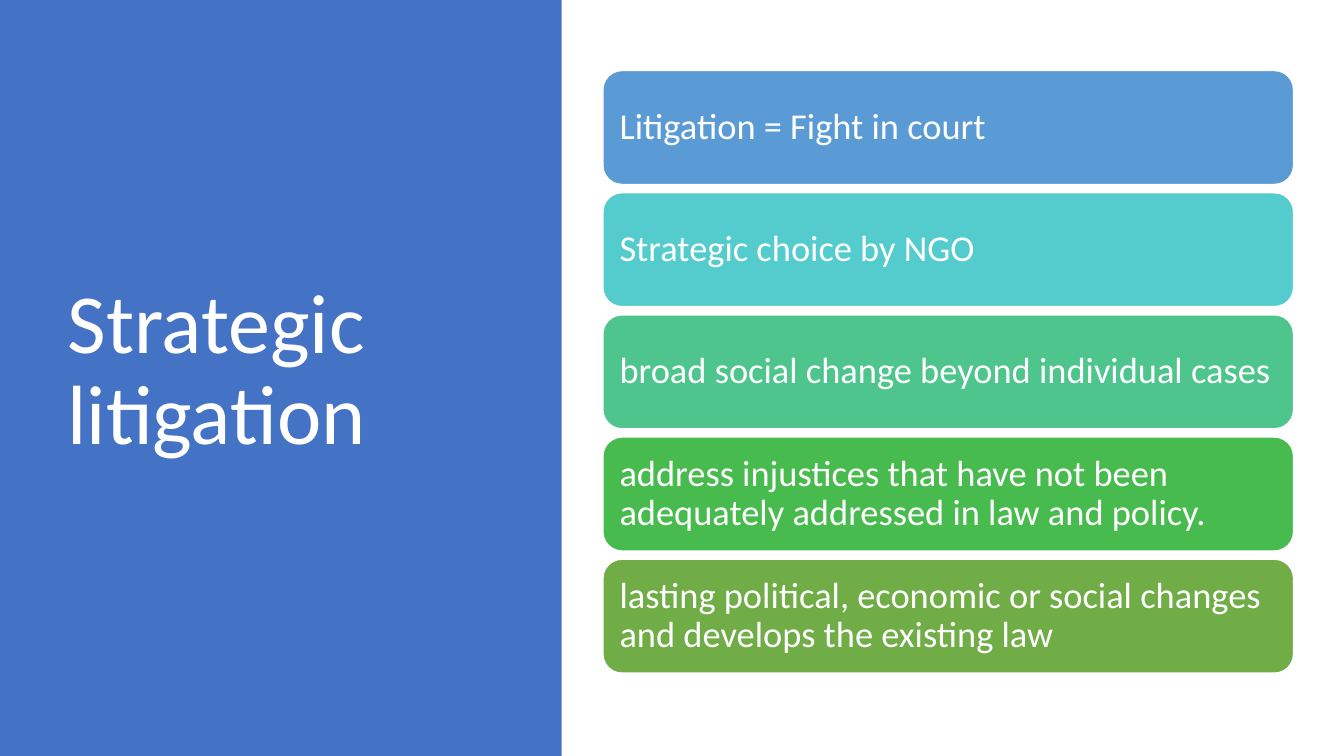
from pptx import Presentation
from pptx import util as u
from pptx.dml import color
from pptx.enum import shapes, text


def rgb(code):
    return color.RGBColor.from_string(code)


class Deck:
    font = "Calibri"
    ink = "FFFFFF"
    inset = u.Inches(0.11)

    def __init__(self, width, height):
        self.file = Presentation()
        self.file.slide_width = u.Inches(width)
        self.file.slide_height = u.Inches(height)
        self.slide = self.file.slides.add_slide(self.file.slide_layouts[5])

    def area(self, left, top, width, height):
        across = self.file.slide_width / 100
        down = self.file.slide_height / 100
        return int(left * across), int(top * down), int(width * across), int(height * down)

    def wording(self, frame, words, size):
        frame.text = words
        frame.word_wrap = True
        frame.auto_size = text.MSO_AUTO_SIZE.NONE
        frame.vertical_anchor = text.MSO_ANCHOR.MIDDLE
        line = frame.paragraphs[0]
        line.alignment = text.PP_ALIGN.LEFT
        line.line_spacing = 0.9
        for run in line.runs:
            run.font.name = self.font
            run.font.size = u.Pt(size)
            run.font.color.rgb = rgb(self.ink)

    def block(self, kind, area, fill):
        block = self.slide.shapes.add_shape(kind, *self.area(*area))
        block.shadow.inherit = False
        block.fill.solid()
        block.fill.fore_color.rgb = rgb(fill)
        block.line.fill.background()
        return block

    def panel(self, area, fill):
        panel = self.block(shapes.MSO_SHAPE.RECTANGLE, area, fill)
        self.slide.shapes.title.element.addprevious(panel.element)

    def heading(self, area, words, size):
        heading = self.slide.shapes.title
        heading.left, heading.top, heading.width, heading.height = self.area(*area)
        self.wording(heading.text_frame, words, size)

    def card(self, area, fill, words, size):
        card = self.block(shapes.MSO_SHAPE.ROUNDED_RECTANGLE, area, fill)
        card.line.color.rgb = rgb(self.ink)
        card.line.width = u.Pt(1)
        frame = card.text_frame
        frame.margin_left = frame.margin_right = self.inset
        frame.margin_top = frame.margin_bottom = self.inset
        self.wording(frame, words, size)


POINTS = [
    ("5B9BD5", "Litigation = Fight in court"),
    ("54CCCD", "Strategic choice by NGO"),
    ("4DC58D", "broad social change beyond individual cases"),
    ("48BB4F", "address injustices that have not been adequately addressed in law and policy."),
    ("70AD47", "lasting political, economic or social changes and develops the existing law"),
]
FIRST_ROW, ROW_STEP, ROW_HEIGHT = 9.33, 16.16, 15.07


def main():
    deck = Deck(13.33, 7.5)
    deck.panel((0, 0, 41.79, 100), "4472C4")
    deck.heading((4.28, 9.07, 31.21, 80.27), "Strategic litigation", 60)
    for row, (fill, point) in enumerate(POINTS):
        deck.card((44.86, FIRST_ROW + row * ROW_STEP, 51.39, ROW_HEIGHT), fill, point, 26)
    deck.file.save("out.pptx")


if __name__ == "__main__":
    main()
